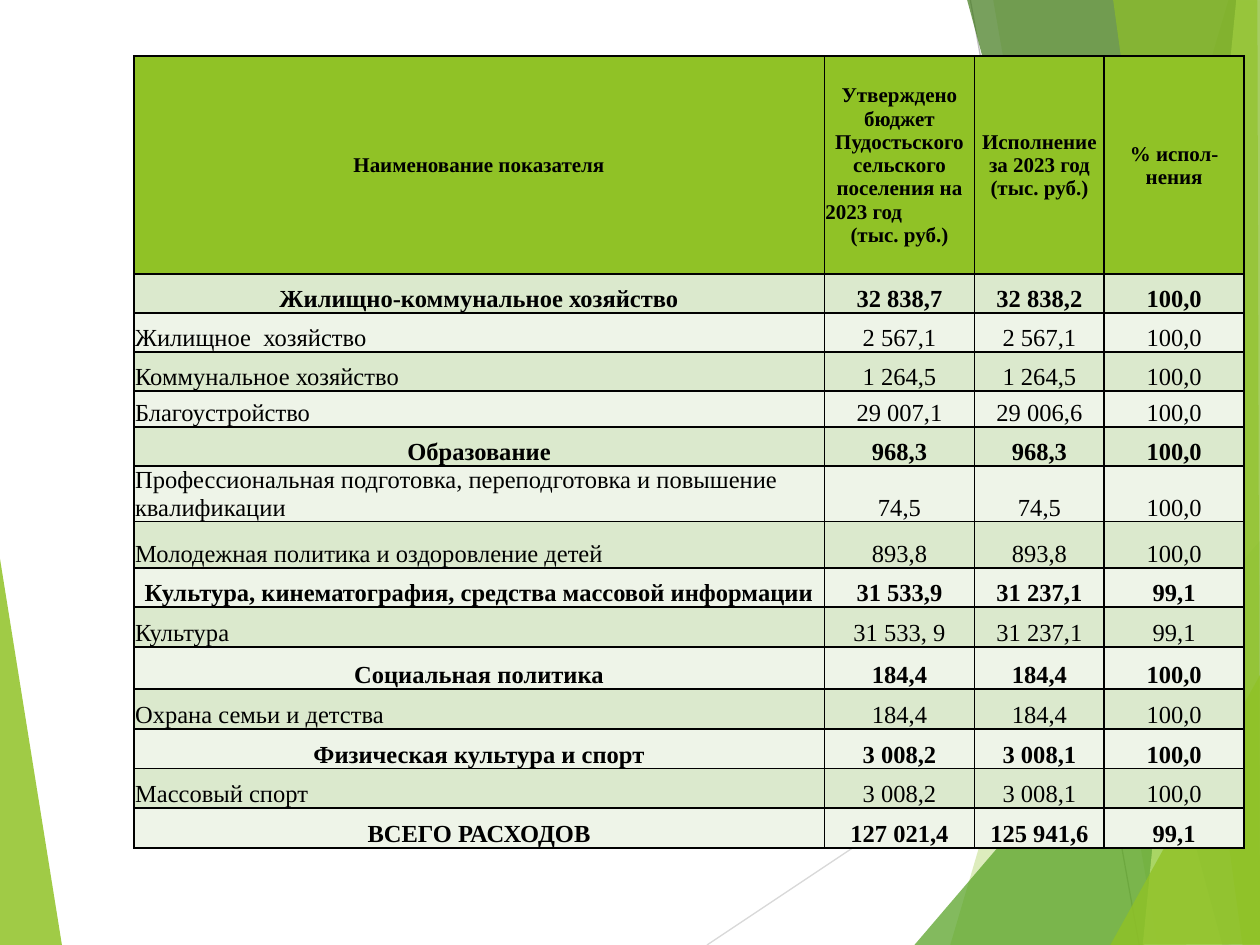
from lxml import etree
from pptx import Presentation
from pptx import util as u
from pptx.dml.color import RGBColor
from pptx.enum import shapes, text
from pptx.oxml import ns

Pt = u.Pt


def paint(fill, color, opacity=100):
    fill.solid()
    fill.fore_color.rgb = RGBColor.from_string(color)
    if opacity < 100:
        for node in fill._xPr.iter(ns.qn("a:srgbClr")):
            etree.SubElement(node, ns.qn("a:alpha"), val=str(opacity * 1000))


def write(paragraph, content, size=14, bold=False, align=text.PP_ALIGN.CENTER, color="000000"):
    paragraph.alignment = align
    run = paragraph.add_run()
    run.text = content
    run.font.name = "Times New Roman"
    run.font.size = Pt(size)
    run.font.bold = bold
    paint(run.font.fill, color)


presentation = Presentation()
presentation.slide_width, presentation.slide_height = Pt(720), Pt(540)
slide = presentation.slides.add_slide(presentation.slide_layouts[6])
paint(slide.background.fill, "FFFFFF")

rays = [((404, 540), (720.5, 329), "D9D9D9"), ((554.5, 0), (651, 540), "BFBFBF")]
for start, end, color in rays:
    ray = slide.shapes.add_connector(
        shapes.MSO_CONNECTOR.STRAIGHT, *[Pt(value) for value in start + end])
    ray.line.width = Pt(0.75)
    paint(ray.line.fill, color)
    etree.SubElement(ray._element.spPr, ns.qn("a:effectLst"))

wedges = [
    ([(-0.5, 316), (35.5, 540.5), (-0.5, 540)], "90C226", 85),
    ([(702, 0), (543, 540), (721.5, 540.5), (720.5, 0.5)], "90C226", 30),
    ([(567.5, -0.5), (661.5, 540), (720.5, 540), (720.5, -0.5)], "90C226", 20),
    ([(522.5, 540), (720, 309), (720.5, 540)], "54A021", 72),
    ([(552.5, -0.5), (698.5, 540), (720.5, 539.5), (720.5, -0.5)], "3F7819", 70),
    ([(706.5, -0.5), (653, 540), (720.5, 540), (720, -0.5)], "C0E474", 70),
    ([(636, -0.5), (710, 540), (720, 540), (718.5, -0.5)], "90C226", 65),
    ([(634.5, 540), (720.5, 385), (720.5, 539.5)], "90C226", 80),
]
for points, color, opacity in wedges:
    corners = [(Pt(x), Pt(y)) for x, y in points]
    builder = slide.shapes.build_freeform(*corners[0])
    builder.add_line_segments(corners[1:], close=True)
    wedge = builder.convert_to_shape()
    wedge.shadow.inherit = False
    wedge.line.fill.background()
    paint(wedge.fill, color, opacity)

header = [
    ["Наименование показателя"],
    ["Утверждено бюджет Пудостьского сельского поселения на", "2023 год", "(тыс. руб.)"],
    ["Исполнение за 2023 год (тыс. руб.)"],
    ["% испол-нения"],
]
budget = [
    (22.3, True, "Жилищно-коммунальное хозяйство", "32 838,7", "32 838,2", "100,0"),
    (22.3, False, "Жилищное  хозяйство", "2 567,1", "2 567,1", "100,0"),
    (22.3, False, "Коммунальное хозяйство", "1 264,5", "1 264,5", "100,0"),
    (20.5, False, "Благоустройство", "29 007,1", "29 006,6", "100,0"),
    (22.3, True, "Образование", "968,3", "968,3", "100,0"),
    (31, False, "Профессиональная подготовка, переподготовка и повышение квалификации",
     "74,5", "74,5", "100,0"),
    (26.8, False, "Молодежная политика и оздоровление детей", "893,8", "893,8", "100,0"),
    (22.3, True, "Культура, кинематография, средства массовой информации",
     "31 533,9", "31 237,1", "99,1"),
    (22.9, False, "Культура", "31 533, 9", "31 237,1", "99,1"),
    (24, True, "Социальная политика", "184,4", "184,4", "100,0"),
    (22.9, False, "Охрана семьи и детства", "184,4", "184,4", "100,0"),
    (22.6, True, "Физическая культура и спорт", "3 008,2", "3 008,1", "100,0"),
    (22.6, False, "Массовый спорт", "3 008,2", "3 008,1", "100,0"),
    (22.6, True, "ВСЕГО РАСХОДОВ", "127 021,4", "125 941,6", "99,1"),
]
rows = [(124.6, True, *header)]
rows += [(height, bold, *[[value] for value in values]) for height, bold, *values in budget]
widths = [394.5, 86, 74, 80]

table = slide.shapes.add_table(
    len(rows), len(widths), Pt(76.5), Pt(32), Pt(sum(widths)), Pt(sum(row[0] for row in rows))).table
table.first_row = table.horz_banding = False
for column, width in zip(table.columns, widths):
    column.width = Pt(width)

for row_index, (height, bold, *values) in enumerate(rows):
    table.rows[row_index].height = Pt(height)
    is_header = row_index == 0
    color = "90C226" if is_header else ("EEF4E8", "DBE9CD")[row_index % 2]
    for column_index, lines in enumerate(values):
        cell = table.cell(row_index, column_index)
        cell.margin_left = cell.margin_right = cell.margin_top = Pt(0.7)
        cell.margin_bottom = 0
        cell.vertical_anchor = text.MSO_ANCHOR.MIDDLE if is_header else text.MSO_ANCHOR.BOTTOM
        properties = cell._tc.get_or_add_tcPr()
        for side in ("lnL", "lnR", "lnT", "lnB"):
            border = etree.SubElement(properties, ns.qn("a:" + side), w=str(Pt(1)))
            solid = etree.SubElement(border, ns.qn("a:solidFill"))
            etree.SubElement(solid, ns.qn("a:srgbClr"), val="000000")
        paint(cell.fill, color)
        for line_index, line in enumerate(lines):
            frame = cell.text_frame
            paragraph = frame.add_paragraph() if line_index else frame.paragraphs[0]
            flush_left = line == "2023 год" or (column_index == 0 and not bold)
            write(paragraph, line, size=12 if is_header else 14, bold=bold,
                  align=text.PP_ALIGN.LEFT if flush_left else text.PP_ALIGN.CENTER)

presentation.save("out.pptx")
